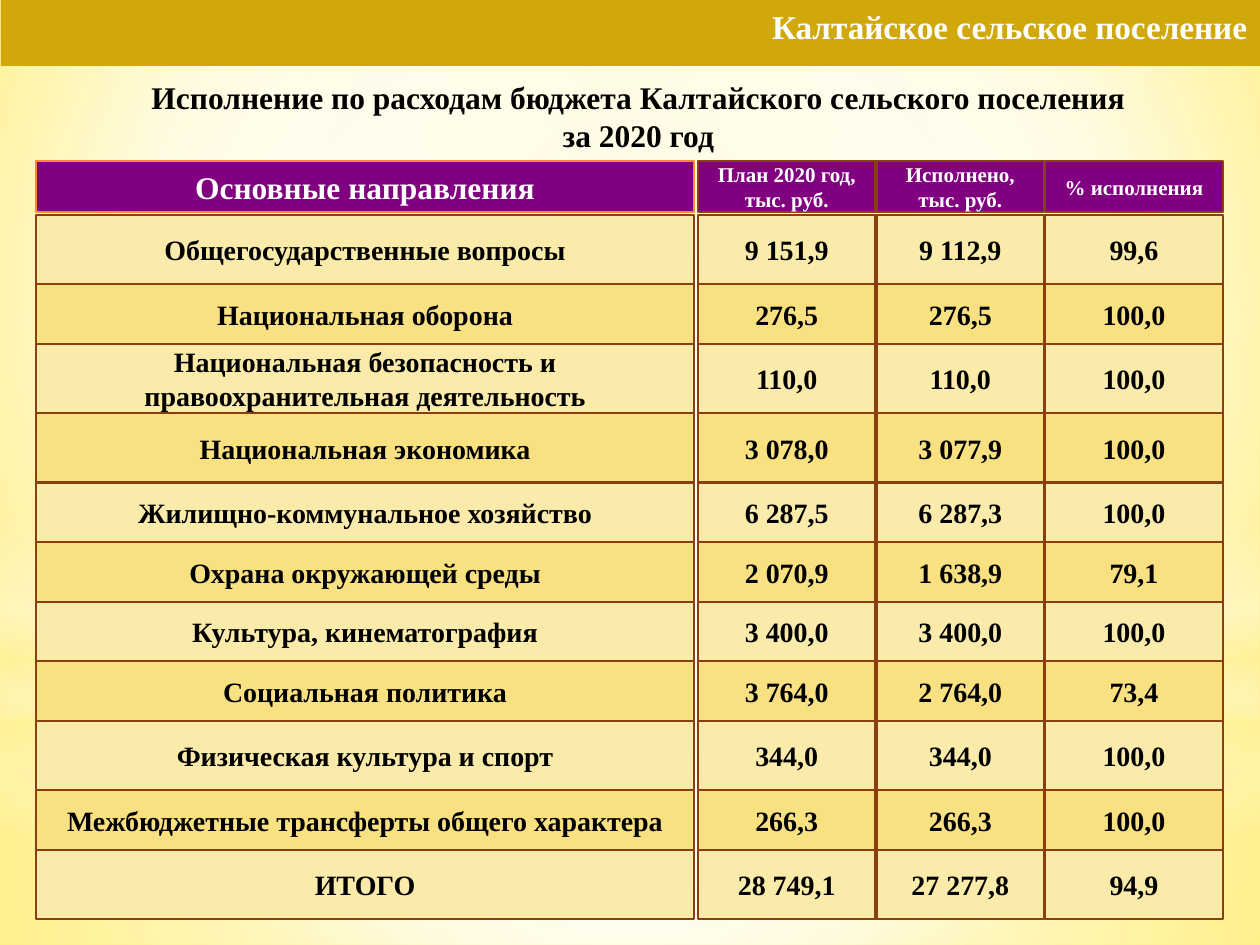
import lxml.etree
import pptx
import pptx.dml.color
import pptx.enum.shapes
import pptx.enum.text
import pptx.oxml.ns
import pptx.util

Cm = pptx.util.Cm
Shape = pptx.enum.shapes.MSO_SHAPE
Align = pptx.enum.text.PP_ALIGN
Anchor = pptx.enum.text.MSO_ANCHOR

HEADINGS = ["Основные направления", "План 2020 год, тыс. руб.", "Исполнено, тыс. руб.", "% исполнения"]
EXPENSES = [
    ("Общегосударственные вопросы", "9 151,9", "9 112,9", "99,6"),
    ("Национальная оборона", "276,5", "276,5", "100,0"),
    ("Национальная безопасность и правоохранительная деятельность", "110,0", "110,0", "100,0"),
    ("Национальная экономика", "3 078,0", "3 077,9", "100,0"),
    ("Жилищно-коммунальное хозяйство", "6 287,5", "6 287,3", "100,0"),
    ("Охрана окружающей среды", "2 070,9", "1 638,9", "79,1"),
    ("Культура, кинематография", "3 400,0", "3 400,0", "100,0"),
    ("Социальная политика", "3 764,0", "2 764,0", "73,4"),
    ("Физическая культура и спорт", "344,0", "344,0", "100,0"),
    ("Межбюджетные трансферты общего характера", "266,3", "266,3", "100,0"),
    ("ИТОГО", "28 749,1", "27 277,8", "94,9"),
]
COLUMNS = [(0.72, 13.28), (14.07, 3.58), (17.67, 3.38), (21.07, 3.58)]
TALL_ROWS = {0, 2, 3, 8, 10}
BAND_FILLS = ["FBEBAB", "F9E181"]
HEADER_TOP, HEADER_HEIGHT, BODY_TOP = 3.25, 1.03, 4.33
CENTER = (50, 50, 50, 50)


def color(value):
    return pptx.dml.color.RGBColor.from_string(value)


class BudgetSlide:
    font = "Times New Roman"
    border = "893F0F"

    def __init__(self, deck):
        self.page = deck.slides.add_slide(deck.slide_layouts[6])

    def gradient(self, owner, fill, stops, focus=None):
        fill.gradient()
        qn = pptx.oxml.ns.qn
        node = next(owner.element.iter(qn("a:gradFill")))
        node.clear()

        def add(parent, tag, **values):
            return lxml.etree.SubElement(parent, qn(tag), {key: str(value) for key, value in values.items()})

        stop_list = add(node, "a:gsLst")
        for position, shade, opacity in stops:
            stop = add(stop_list, "a:gs", pos=position * 1000)
            tone = add(stop, "a:srgbClr", val=shade)
            if opacity < 100:
                add(tone, "a:alpha", val=opacity * 1000)
        if focus:
            circle = add(node, "a:path", path="circle")
            add(circle, "a:fillToRect", **{side: size * 1000 for side, size in zip("ltrb", focus)})
        else:
            add(node, "a:lin", ang=5400000, scaled=0)

    def background(self, stops, focus):
        self.gradient(self.page, self.page.background.fill, stops, focus)

    def shape(self, kind, area):
        box = self.page.shapes.add_shape(kind, *map(Cm, area))
        box.shadow.inherit = False
        box.line.fill.background()
        return box

    def glow(self, kind, area, stops, focus=None):
        box = self.shape(kind, area)
        self.gradient(box, box.fill, stops, focus)

    def label(self, box, lines, size, ink, align=Align.CENTER, anchor=Anchor.MIDDLE):
        frame = box.text_frame
        frame.word_wrap = True
        frame.vertical_anchor = anchor
        style = {"name": self.font, "size": pptx.util.Pt(size), "bold": True}
        for index, line in enumerate(lines):
            para = frame.add_paragraph() if index else frame.paragraphs[0]
            para.alignment = align
            span = para.add_run()
            span.text = line
            for key, value in style.items():
                setattr(span.font, key, value)
            span.font.color.rgb = color(ink)

    def banner(self, area, text):
        box = self.shape(Shape.RECTANGLE, area)
        box.fill.solid()
        box.fill.fore_color.rgb = color("D0A80A")
        self.label(box, [text], 19, "FFFFFF", Align.RIGHT, Anchor.TOP)

    def caption(self, area, lines):
        box = self.page.shapes.add_textbox(*map(Cm, area))
        self.label(box, lines, 18, "000000", anchor=Anchor.TOP)

    def cell(self, area, text, fill, size=16, ink="000000", border=None):
        box = self.shape(Shape.RECTANGLE, area)
        box.fill.solid()
        box.fill.fore_color.rgb = color(fill)
        box.line.color.rgb = color(border or self.border)
        box.line.width = pptx.util.Pt(1.25)
        self.label(box, [text], size, ink)


def main():
    deck = pptx.Presentation()
    deck.slide_width, deck.slide_height = Cm(25.4), Cm(19.05)
    slide = BudgetSlide(deck)

    slide.background([(0, "FFF18D", 100), (60, "FFFFFF", 100), (100, "FFE94E", 100)], (20, 10, 20, 60))
    slide.glow(Shape.RECTANGLE, (0, 14.17, 25.4, 4.88),
               [(0, "FFFFFF", 91), (37, "FFFFFF", 76), (100, "FFF39D", 79)], CENTER)
    slide.glow(Shape.RECTANGLE, (0, 0, 25.4, 14.17),
               [(0, "FFFFFF", 89), (48, "FFFFFF", 62), (100, "FFF39D", 79)], CENTER)
    slide.glow(Shape.RECTANGLE, (0, 10.46, 25.4, 6.35),
               [(0, "FFFFFF", 0), (29, "FFFFFF", 30), (45, "FFF39D", 40),
                (55, "FFFFFF", 26), (65, "FFF39D", 60), (100, "FFFFFF", 0)])
    slide.glow(Shape.OVAL, (0, 4.45, 25.4, 14.17), [(0, "FFFFFF", 100), (56, "FFFFFF", 0)], CENTER)

    slide.banner((0.02, 0, 25.38, 1.33), "Калтайское сельское поселение")
    slide.caption((0.72, 1.45, 24.3, 1.8),
                  ["Исполнение по расходам бюджета Калтайского сельского поселения", "за 2020 год"])

    for index, ((left, width), heading) in enumerate(zip(COLUMNS, HEADINGS)):
        slide.cell((left, HEADER_TOP, width, HEADER_HEIGHT), heading, "800080",
                   size=12 if index else 18, ink="FFFFFF", border=None if index else "FE8637")

    top = BODY_TOP
    for index, expense in enumerate(EXPENSES):
        height = 1.4 if index in TALL_ROWS else 1.2
        for (left, width), text in zip(COLUMNS, expense):
            slide.cell((left, top, width, height), text, BAND_FILLS[index % 2])
        top += height

    deck.save("out.pptx")


if __name__ == "__main__":
    main()
